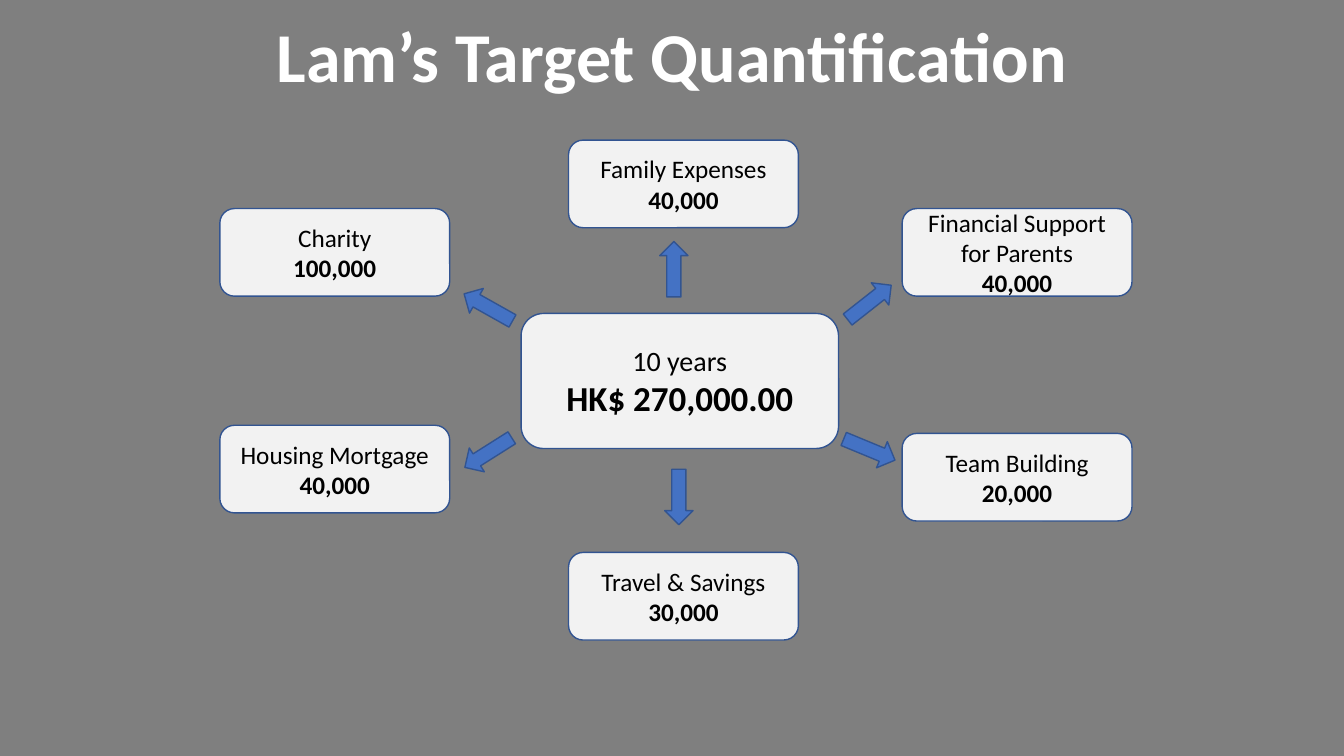
import pptx
import pptx.util
import pptx.dml.color
import pptx.enum.shapes
import pptx.enum.text
import pptx.oxml
import pptx.oxml.ns

Pt = pptx.util.Pt
SHAPES = pptx.enum.shapes.MSO_SHAPE
ALIGN = pptx.enum.text.PP_ALIGN
ANCHOR = pptx.enum.text.MSO_ANCHOR
WIDTH, HEIGHT = 960, 540
COLORS = {
    "veil": "000000",
    "title": "FFFFFF",
    "card": "F2F2F2",
    "outline": "325491",
    "arrow": "4472C4",
    "text": "000000",
}


class Deck:
    font = "Calibri"

    def __init__(self, prs):
        self.s = prs.slides.add_slide(prs.slide_layouts[5])

    def color(self, name):
        return pptx.dml.color.RGBColor.from_string(COLORS[name])

    def run(self, p, text, size, color, bold=False):
        r = p.add_run()
        r.text = text
        r.font.name = self.font
        r.font.size = Pt(size)
        r.font.bold = bold
        r.font.color.rgb = self.color(color)

    def shape(self, kind, box, fill, outline=None):
        sp = self.s.shapes.add_shape(kind, *map(Pt, box))
        sp.shadow.inherit = False
        sp.fill.solid()
        sp.fill.fore_color.rgb = self.color(fill)
        if outline:
            sp.line.color.rgb = self.color(outline)
            sp.line.width = Pt(1)
        else:
            sp.line.fill.background()
        return sp

    def veil(self):
        sp = self.shape(SHAPES.RECTANGLE, (0, 0, WIDTH, HEIGHT), "veil")
        clr = sp._element.spPr.find(".//" + pptx.oxml.ns.qn("a:srgbClr"))
        alpha = pptx.oxml.parse_xml(
            "<a:alpha %s val='50000'/>" % pptx.oxml.ns.nsdecls("a"))
        clr.append(alpha)
        self.s.shapes._spTree.insert(2, sp._element)

    def title(self, text, box):
        sp = self.s.shapes.title
        sp.left, sp.top, sp.width, sp.height = map(Pt, box)
        tf = sp.text_frame
        tf.word_wrap = True
        tf.auto_size = pptx.enum.text.MSO_AUTO_SIZE.NONE
        tf.vertical_anchor = ANCHOR.TOP
        p = tf.paragraphs[0]
        p.alignment = ALIGN.CENTER
        p.line_spacing = 0.9
        self.run(p, text, 50, "title", True)

    def card(self, box, label, amount, label_size=18, amount_size=18):
        sp = self.shape(SHAPES.ROUNDED_RECTANGLE, box, "card", "outline")
        tf = sp.text_frame
        tf.word_wrap = True
        tf.vertical_anchor = ANCHOR.MIDDLE
        p = tf.paragraphs[0]
        p.alignment = ALIGN.CENTER
        self.run(p, label, label_size, "text")
        p = tf.add_paragraph()
        p.alignment = ALIGN.CENTER
        self.run(p, amount, amount_size, "text", True)

    def arrow(self, left, top, angle):
        box = (left, top, 39.6, 20.2)
        sp = self.shape(SHAPES.LEFT_ARROW, box, "arrow", "outline")
        sp.rotation = angle


def main():
    prs = pptx.Presentation()
    prs.slide_width, prs.slide_height = Pt(WIDTH), Pt(HEIGHT)
    deck = Deck(prs)
    deck.veil()
    deck.title("Lam’s Target Quantification", (0, 12.2, WIDTH, 90))
    deck.card((372.2, 223.9, 226.8, 96.5), "10 years", "HK$ 270,000.00", 20, 25)

    left, middle, right = 157, 406.1, 644.4
    targets = [
        (middle, 100.1, "Family Expenses", "40,000"),
        (left, 149, "Charity", "100,000"),
        (right, 149, "Financial Support for Parents", "40,000"),
        (left, 303.8, "Housing Mortgage", "40,000"),
        (right, 309.6, "Team Building", "20,000"),
        (middle, 394.6, "Travel & Savings", "30,000"),
    ]
    for x, y, label, amount in targets:
        deck.card((x, y, 164.2, 62.6), label, amount)

    arrows = [
        (329, 209.5, 29.3),
        (461.5, 182.2, 90),
        (601.2, 205.9, 141.8),
        (329, 313.2, 327.7),
        (465.1, 344.9, 270),
        (601.2, 311, 202.5),
    ]
    for x, y, angle in arrows:
        deck.arrow(x, y, angle)

    prs.save("out.pptx")


if __name__ == "__main__":
    main()
